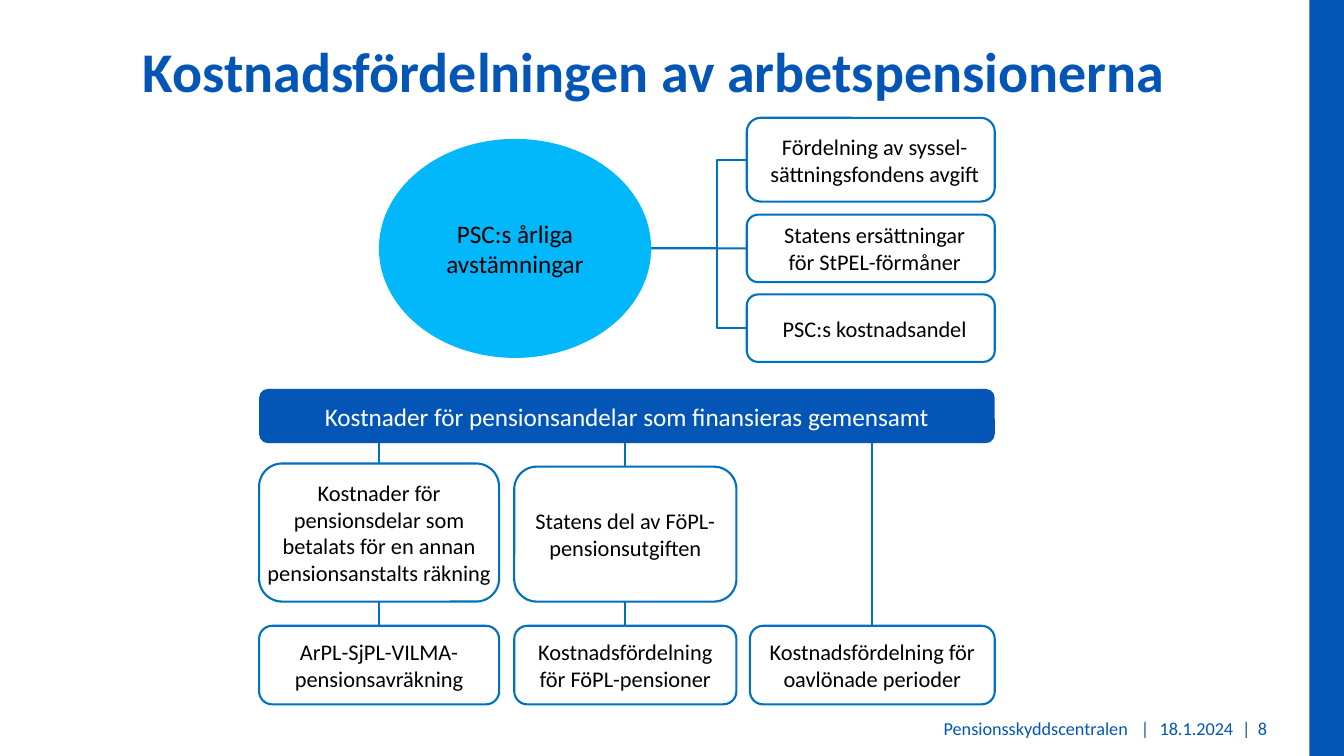
from lxml.etree import SubElement
from pptx import Presentation
from pptx.dml.color import RGBColor
from pptx.enum.shapes import MSO_CONNECTOR, MSO_SHAPE
from pptx.enum.text import MSO_ANCHOR, PP_ALIGN
from pptx.oxml.ns import qn
from pptx.util import Cm, Pt

FONT = "Calibri"
BLUE, LINE_BLUE, SKY = "0356B5", "0070C0", "02B7FA"
WHITE, BLACK = "FFFFFF", "000000"
TOP, LEFT, BOTTOM = 0, 1, 2


def color(hex_code):
    return RGBColor.from_string(hex_code)


def write(shape, text, size, hex_code, align=PP_ALIGN.CENTER, bold=False, inset=0):
    frame = shape.text_frame
    frame.text = text
    frame.word_wrap = True
    frame.vertical_anchor = MSO_ANCHOR.MIDDLE
    frame.margin_left = Cm(inset)
    frame.margin_right = frame.margin_top = frame.margin_bottom = 0
    for paragraph in frame.paragraphs:
        paragraph.alignment = align
        for run in paragraph.runs:
            run.font.name = FONT
            run.font.size = Pt(size)
            run.font.bold = bold
            run.font.color.rgb = color(hex_code)


def add_filled(slide, kind, x, y, w, h, fill, outline=None):
    shape = slide.shapes.add_shape(kind, Cm(x), Cm(y), Cm(w), Cm(h))
    shape.shadow.inherit = False
    shape.fill.solid()
    shape.fill.fore_color.rgb = color(fill)
    if outline:
        shape.line.color.rgb = color(outline)
        shape.line.width = Pt(1.5)
    else:
        shape.line.fill.background()
    return shape


def add_box(slide, text, x, y, w, h, inset=0):
    box = add_filled(slide, MSO_SHAPE.ROUNDED_RECTANGLE, x, y, w, h, WHITE, LINE_BLUE)
    write(box, text, 16, BLACK, inset=inset)
    return box


def add_link(slide, kind, start, end):
    link = slide.shapes.add_connector(kind, *start, *end)
    link.line.color.rgb = color(LINE_BLUE)
    link.line.width = Pt(1.5)
    SubElement(link._element.spPr, qn("a:effectLst"))
    return link


def link_down(slide, upper, lower, joined):
    """Draw a vertical line above the middle of the lower box."""
    x = lower.left + lower.width // 2
    link = add_link(slide, MSO_CONNECTOR.STRAIGHT,
                    (x, upper.top + upper.height), (x, lower.top))
    if joined:
        link.begin_connect(upper, BOTTOM)
    link.end_connect(lower, TOP)


def link_branch(slide, ellipse, box):
    """Draw a line from the right of the ellipse to the left side of a box."""
    start = (ellipse.left + ellipse.width, ellipse.top + ellipse.height // 2)
    end = (box.left, box.top + box.height // 2)
    level = abs(start[1] - end[1]) < Cm(0.1)
    link = add_link(slide, MSO_CONNECTOR.STRAIGHT if level else MSO_CONNECTOR.ELBOW,
                    start, end)
    link.end_connect(box, LEFT)
    if not level:
        guides = link._element.spPr.find(qn("a:prstGeom")).find(qn("a:avLst"))
        SubElement(guides, qn("a:gd"), name="adj1", fmla="val 69000")


def add_footer(slide, text, x, w, align):
    footer = slide.shapes.add_textbox(Cm(x), Cm(17.9), Cm(w), Cm(0.9))
    write(footer, text, 13, BLUE, align)


def main():
    prs = Presentation()
    prs.slide_width, prs.slide_height = Cm(33.87), Cm(19.05)
    slide = prs.slides.add_slide(prs.slide_layouts[5])

    # Side band and title
    add_filled(slide, MSO_SHAPE.RECTANGLE, 33, 0, 0.87, 19.05, BLUE)
    title = slide.shapes.title
    title.left, title.top, title.width, title.height = Cm(0), Cm(0.71), Cm(32.94), Cm(2.13)
    write(title, "Kostnadsfördelningen av arbetspensionerna", 40, BLUE, bold=True)

    # Yearly reconciliations and their three branches
    reconciliations = add_filled(slide, MSO_SHAPE.OVAL, 9.55, 3.5, 6.86, 5.52, SKY)
    write(reconciliations, "PSC:s årliga\vavstämningar", 18, BLACK)
    branches = [
        ("Fördelning av syssel-\vsättningsfondens avgift", 2.97, 2.11),
        ("Statens ersättningar\vför StPEL-förmåner", 5.41, 1.7),
        ("PSC:s kostnadsandel", 7.42, 1.7),
    ]
    for text, y, h in branches:
        branch = add_box(slide, text, 18.82, y, 6.25, h, inset=0.2)
        link_branch(slide, reconciliations, branch)

    # Jointly financed costs
    joint_costs = add_filled(slide, MSO_SHAPE.ROUNDED_RECTANGLE,
                             6.53, 9.8, 18.54, 1.37, BLUE)
    write(joint_costs, "Kostnader för pensionsandelar som finansieras gemensamt", 18, WHITE)

    # Columns: x, width, top and text of an optional cost box, settlement below
    columns = [
        (6.53, 6.05, 11.68,
         "Kostnader för pensionsdelar som betalats för en annan pensionsanstalts räkning",
         "ArPL-SjPL-VILMA-\vpensionsavräkning"),
        (12.96, 5.6, 11.76, "Statens del av FöPL-\vpensionsutgiften",
         "Kostnadsfördelning\vför FöPL-pensioner"),
        (18.9, 6.17, None, None, "Kostnadsfördelning för oavlönade perioder"),
    ]
    for x, w, cost_top, cost_text, settlement_text in columns:
        settlement = add_box(slide, settlement_text, x, 15.77, w, 1.98)
        if cost_text:
            cost = add_box(slide, cost_text, x, cost_top, w, 15.16 - cost_top)
            link_down(slide, joint_costs, cost, joined=False)
            link_down(slide, cost, settlement, joined=True)
        else:
            link_down(slide, joint_costs, settlement, joined=False)

    # Footer
    add_footer(slide, "Pensionsskyddscentralen", 20.4, 8.02, PP_ALIGN.RIGHT)
    add_footer(slide, "18.1.2024", 28.93, 2.44, PP_ALIGN.CENTER)
    add_footer(slide, "8", 31.7, 0.9, PP_ALIGN.LEFT)
    for bar_center in (28.86, 31.41):
        add_footer(slide, "|", bar_center - 0.2, 0.4, PP_ALIGN.CENTER)

    prs.save("out.pptx")


if __name__ == "__main__":
    main()
